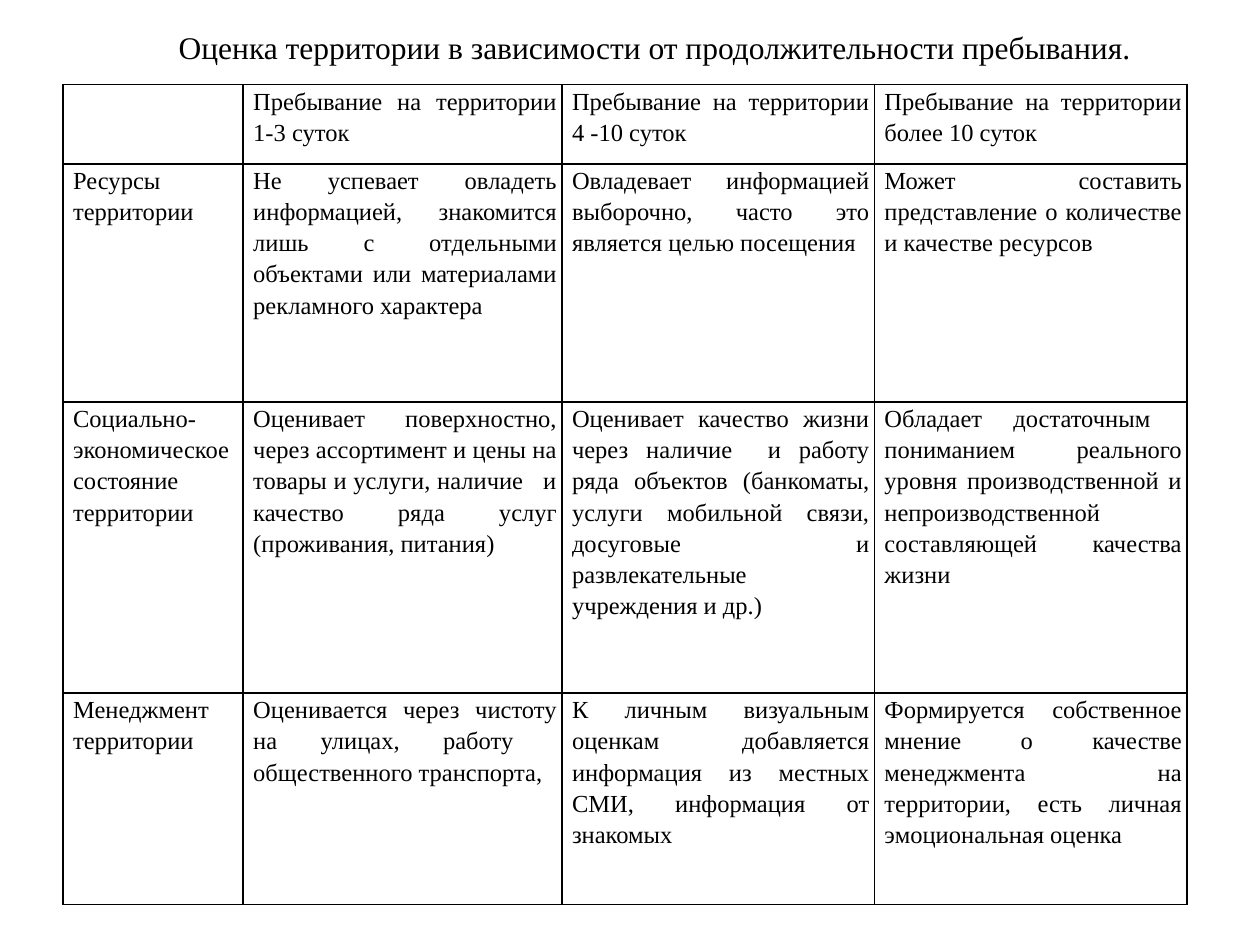
from lxml import etree
from pptx import Presentation
from pptx.dml.color import RGBColor
from pptx.enum.text import MSO_ANCHOR, MSO_AUTO_SIZE, PP_ALIGN
from pptx.oxml.ns import qn
from pptx.util import Inches, Pt

JUSTIFY = PP_ALIGN.JUSTIFY
MIDDLE = MSO_ANCHOR.MIDDLE
GROW = MSO_AUTO_SIZE.SHAPE_TO_FIT_TEXT

FONT = "Times New Roman"
BLACK = "000000"

TITLE = "Оценка территории в зависимости от продолжительности пребывания."
COL_WIDTHS = [1.43, 2.53, 2.48, 2.48]
ROW_HEIGHTS = [0.63, 1.89, 2.31, 1.68]
ROWS = [
    ["",
     "Пребывание на территории 1-3 суток",
     "Пребывание на территории 4 -10 суток",
     "Пребывание на территории более 10 суток"],
    ["Ресурсы территории",
     "Не успевает овладеть информацией, знакомится лишь с отдельными "
     "объектами или материалами рекламного характера",
     "Овладевает информацией выборочно, часто это является целью посещения",
     "Может составить представление о количестве и качестве ресурсов"],
    ["Социально-экономическое состояние территории",
     "Оценивает поверхностно, через ассортимент и цены на товары и услуги, "
     "наличие   и качество ряда услуг (проживания, питания)",
     "Оценивает качество жизни через наличие  и работу ряда объектов "
     "(банкоматы, услуги мобильной связи, досуговые и развлекательные "
     "учреждения и др.)",
     "Обладает достаточным  пониманием реального уровня производственной и "
     "непроизводственной составляющей качества жизни"],
    ["Менеджмент территории",
     "Оценивается через чистоту на улицах, работу  общественного транспорта,",
     "К личным визуальным оценкам добавляется информация из местных СМИ, "
     "информация от знакомых",
     "Формируется собственное мнение о качестве менеджмента на территории, "
     "есть личная эмоциональная оценка"],
]


def color(hex_code):
    return RGBColor.from_string(hex_code)


def add_run(p, text, size):
    r = p.add_run()
    r.text = text
    r.font.name = FONT
    r.font.size = Pt(size)
    r.font.color.rgb = color(BLACK)


def set_indent(p, left, first_line):
    pPr = p._p.get_or_add_pPr()
    pPr.set("marL", str(Inches(left)))
    pPr.set("indent", str(Inches(first_line)))


def set_borders(cell, hex_code, width):
    tcPr = cell._tc.get_or_add_tcPr()
    for side in ("a:lnL", "a:lnR", "a:lnT", "a:lnB"):
        ln = etree.SubElement(tcPr, qn(side), w=str(Pt(width)))
        fill = etree.SubElement(ln, qn("a:solidFill"))
        etree.SubElement(fill, qn("a:srgbClr"), val=hex_code)


def fill_cell(cell, text):
    cell.margin_left = cell.margin_right = Inches(0.04)
    cell.margin_top = cell.margin_bottom = 0
    set_borders(cell, BLACK, 1)
    cell.fill.background()
    if text:
        p = cell.text_frame.paragraphs[0]
        p.alignment = JUSTIFY
        p.line_spacing = 1.15
        set_indent(p, 0.04, 0)
        add_run(p, text, 14)


def add_title(s, left, top, width, height):
    sp = s.shapes.add_textbox(Inches(left), Inches(top), Inches(width), Inches(height))
    tf = sp.text_frame
    tf.word_wrap = False
    tf.auto_size = GROW
    tf.vertical_anchor = MIDDLE
    p = tf.paragraphs[0]
    set_indent(p, 0, 0.49)
    add_run(p, TITLE, 18)


def add_assessment_table(s, left, top):
    table = s.shapes.add_table(
        len(ROWS), len(COL_WIDTHS), Inches(left), Inches(top),
        Inches(sum(COL_WIDTHS)), Inches(sum(ROW_HEIGHTS))).table
    table.first_row = table.horz_banding = False
    for column, width in zip(table.columns, COL_WIDTHS):
        column.width = Inches(width)
    for row, height, texts in zip(table.rows, ROW_HEIGHTS, ROWS):
        row.height = Inches(height)
        for cell, text in zip(row.cells, texts):
            fill_cell(cell, text)


def main():
    prs = Presentation()
    prs.slide_width = Inches(10)
    prs.slide_height = Inches(7.5)
    s = prs.slides.add_slide(prs.slide_layouts[6])
    add_assessment_table(s, 0.5, 0.67)
    add_title(s, 0.83, 0.17, 8.33, 0.4)
    prs.save("out.pptx")


if __name__ == "__main__":
    main()
